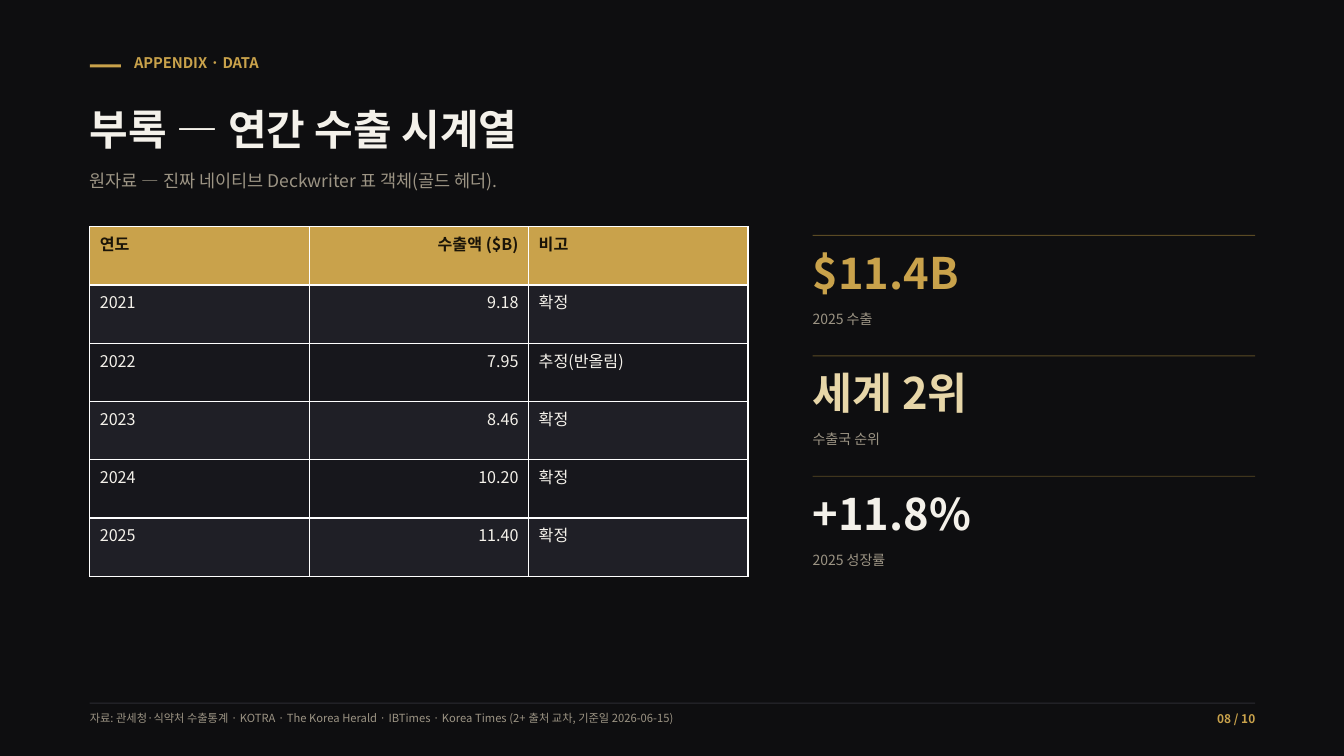
from dataclasses import dataclass

from lxml import etree
from pptx import Presentation, util as u
from pptx.dml.color import RGBColor
from pptx.enum import shapes, text
from pptx.oxml import ns

FONT = "Noto Sans CJK KR"
HUES = {
    "night": "0E0E10", "gold": "C9A24B", "sand": "E7D6A8", "ivory": "F4F1EA",
    "muted": "9C9484", "ink": "1A1408", "bronze": "5A4A24", "line": "2C2C32",
    "odd": "1F1F26", "even": "17171C",
}
LEFT, WIDE = 0.89, 11.56
SIDE, SPAN = 8.06, 4.39
RIGHT = text.PP_ALIGN.RIGHT


@dataclass
class Style:
    size: float
    hue: str
    bold: bool = False


@dataclass
class Stat:
    value: str
    label: str
    hue: str


STATS = [
    Stat("$11.4B", "2025 수출", "gold"),
    Stat("세계 2위", "수출국 순위", "sand"),
    Stat("+11.8%", "2025 성장률", "ivory"),
]
ROWS = [
    ("연도", "수출액 ($B)", "비고"),
    ("2021", "9.18", "확정"),
    ("2022", "7.95", "추정(반올림)"),
    ("2023", "8.46", "확정"),
    ("2024", "10.20", "확정"),
    ("2025", "11.40", "확정"),
]


def paint(fill, hue: str) -> None:
    fill.solid()
    fill.fore_color.rgb = RGBColor.from_string(HUES[hue])


def write(frame, words: str, style: Style, align=text.PP_ALIGN.LEFT) -> None:
    frame.text = words
    para = frame.paragraphs[0]
    para.alignment = align
    for run in para.runs:
        font = run.font
        font.name, font.size, font.bold = FONT, u.Pt(style.size), style.bold
        font.color.rgb = RGBColor.from_string(HUES[style.hue])
        # East Asian typeface
        face = etree.SubElement(font._element, ns.qn("a:ea"))
        face.set("typeface", FONT)


def place(shape, left: float, top: float, width: float, height: float) -> None:
    shape.left, shape.top = u.Inches(left), u.Inches(top)
    shape.width, shape.height = u.Inches(width), u.Inches(height)


def fit(frame, wrap: bool = True) -> None:
    frame.margin_left = frame.margin_right = 0
    frame.margin_top = frame.margin_bottom = 0
    frame.word_wrap = wrap
    frame.vertical_anchor = text.MSO_ANCHOR.TOP
    frame.auto_size = text.MSO_AUTO_SIZE.SHAPE_TO_FIT_TEXT


def label(slide, words: str, box: tuple, style: Style,
          align=text.PP_ALIGN.LEFT, wrap: bool = True) -> None:
    shape = slide.shapes.add_textbox(*map(u.Inches, box))
    fit(shape.text_frame, wrap)
    write(shape.text_frame, words, style, align)


def bar(slide, box: tuple, hue: str) -> None:
    shape = slide.shapes.add_shape(
        shapes.MSO_SHAPE.RECTANGLE, *map(u.Inches, box))
    shape.shadow.inherit = False
    paint(shape.fill, hue)
    shape.line.fill.background()


def head(slide) -> None:
    bar(slide, (LEFT, 0.64, 0.31, 0.03), "gold")
    label(slide, "APPENDIX · DATA", (1.33, 0.53, 1.28, 0.18),
          Style(10.5, "gold", True), wrap=False)
    title = slide.shapes.title
    place(title, LEFT, 1.03, WIDE, 0.5)
    fit(title.text_frame)
    write(title.text_frame, "부록 — 연간 수출 시계열", Style(30, "ivory", True))
    label(slide, "원자료 — 진짜 네이티브 Deckwriter 표 객체(골드 헤더).",
          (LEFT, 1.69, WIDE, 0.21), Style(12.5, "muted"))


def grid(slide) -> None:
    box = map(u.Inches, (LEFT, 2.25, 6.53, 3.47))
    table = slide.shapes.add_table(len(ROWS), len(ROWS[0]), *box).table
    for i, row in enumerate(ROWS):
        hue = "gold" if i == 0 else "odd" if i % 2 else "even"
        style = Style(11.5, "ivory") if i else Style(11.5, "ink", True)
        for j, words in enumerate(row):
            cell = table.cell(i, j)
            paint(cell.fill, hue)
            align = RIGHT if j == 1 else text.PP_ALIGN.LEFT
            write(cell.text_frame, words, style, align)


def stats(slide) -> None:
    for i, stat in enumerate(STATS):
        top = 2.33 + 1.195 * i
        bar(slide, (SIDE, top, SPAN, 0.01), "bronze")
        label(slide, stat.value, (SIDE, top + 0.11, SPAN, 0.52),
              Style(31, stat.hue, True))
        label(slide, stat.label, (SIDE, top + 0.75, SPAN, 0.17),
              Style(10, "muted"))


def foot(slide) -> None:
    bar(slide, (LEFT, 6.97, WIDE, 0.01), "line")
    label(slide, "자료: 관세청·식약처 수출통계 · KOTRA · The Korea Herald · IBTimes"
          " · Korea Times (2+ 출처 교차, 기준일 2026-06-15)",
          (LEFT, 7.06, 10.58, 0.13), Style(8, "muted"))
    label(slide, "08 / 10", (11.47, 7.06, 0.98, 0.14),
          Style(8.5, "gold", True), RIGHT)


def main() -> None:
    deck = Presentation()
    deck.slide_width, deck.slide_height = u.Inches(13.33), u.Inches(7.5)
    slide = deck.slides.add_slide(deck.slide_layouts[5])
    paint(slide.background.fill, "night")
    for part in (head, grid, stats, foot):
        part(slide)
    deck.save("out.pptx")


if __name__ == "__main__":
    main()
